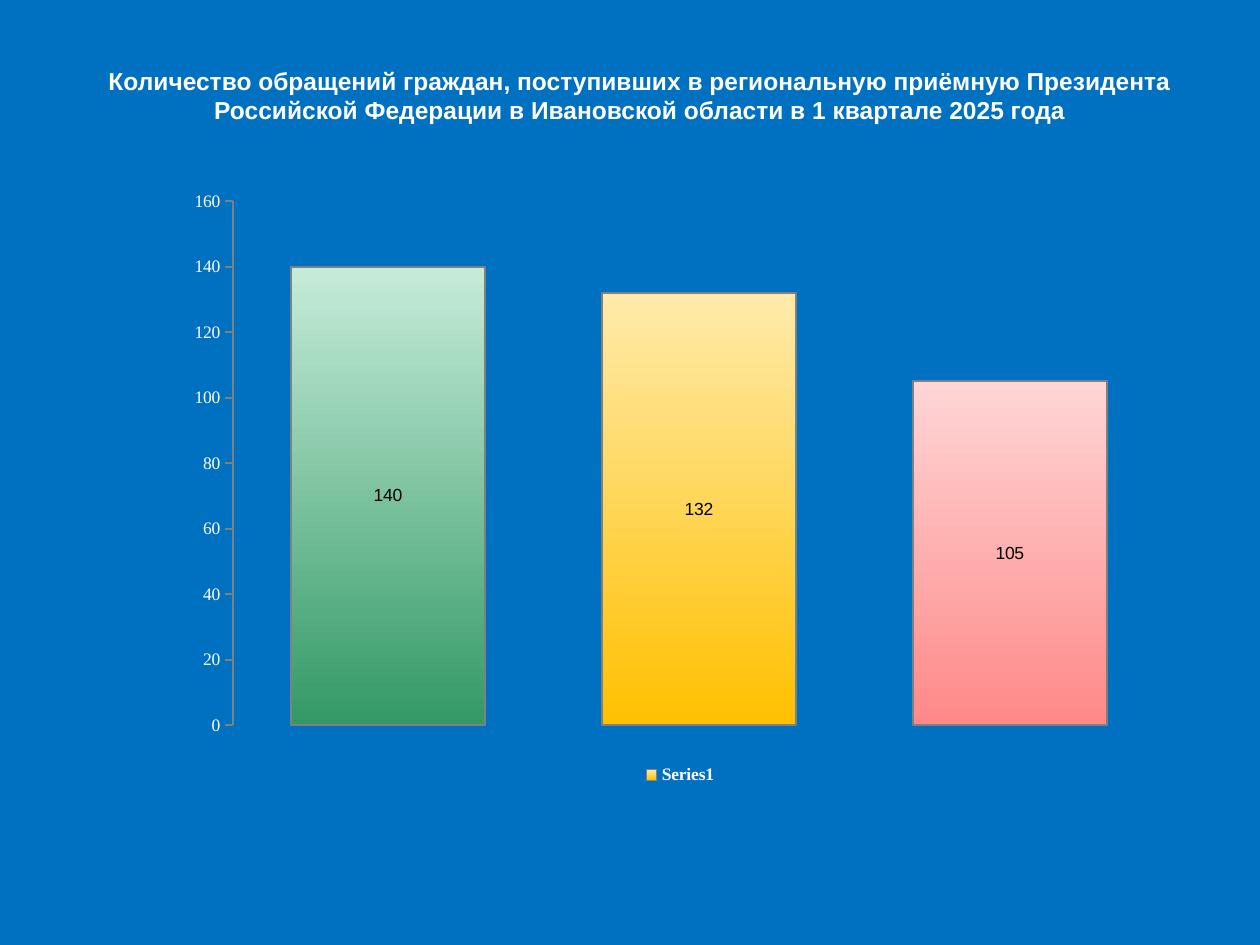
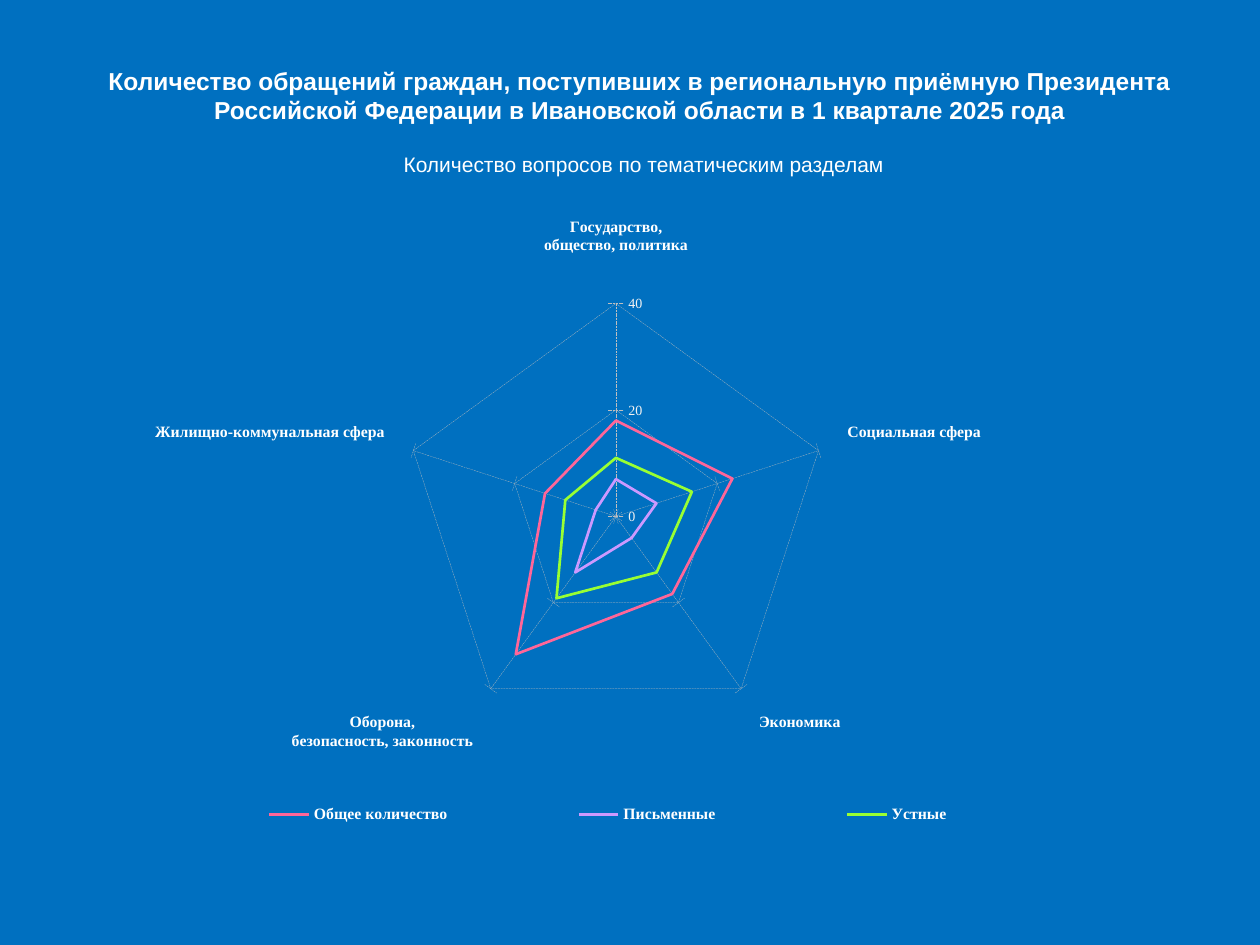
from dataclasses import dataclass

from pptx import Presentation
from pptx.chart.data import CategoryChartData
from pptx.dml.color import RGBColor
from pptx.enum.chart import XL_CHART_TYPE as ChartType
from pptx.enum.chart import XL_LEGEND_POSITION as LegendPosition
from pptx.enum.chart import XL_TICK_MARK as TickMark
from pptx.enum.dml import MSO_LINE as Dash
from pptx.enum.text import MSO_ANCHOR as Anchor
from pptx.enum.text import MSO_AUTO_SIZE as AutoSize
from pptx.enum.text import PP_ALIGN as Align
from pptx.oxml import parse_xml
from pptx.oxml.ns import nsdecls
from pptx.util import Cm, Pt

# Shared look
BLUE, WHITE, BLACK = "0070C0", "FFFFFF", "000000"
GRAY, SILVER, PALE = "808080", "BFBFBF", "F2F2F2"
SANS, SERIF = "Arial", "Times New Roman"
TITLE = ("Количество обращений граждан, поступивших в региональную приёмную "
         "Президента Российской Федерации в Ивановской области в 1 квартале 2025 года")
SUBTITLE = "Количество вопросов по тематическим разделам"


@dataclass(frozen=True)
class Area:
    """Left, top, width and height: centimetres on a page, fractions in a chart."""
    left: float
    top: float
    width: float
    height: float

    def lengths(self):
        return [Cm(v) for v in (self.left, self.top, self.width, self.height)]


@dataclass(frozen=True)
class Bar:
    value: int
    light: str
    dark: str


@dataclass(frozen=True)
class Ring:
    name: str
    values: tuple
    color: str


TITLE_AREA = Area(0.81, 1.12, 24.18, 1.6)
SUBTITLE_AREA = Area(0.89, 2.92, 24.18, 0.79)

BARS = [
    Bar(140, "C6ECD9", "339966"),
    Bar(132, "FFEBAB", "FFC000"),
    Bar(105, "FFD5D5", "FF8989"),
]
TOPICS = [
    "Государство,\nобщество, политика\n",
    "Социальная сфера",
    "Экономика",
    "Оборона,\nбезопасность, законность\n",
    "Жилищно-коммунальная сфера",
]
RINGS = [
    Ring("Общее количество", (18, 23, 18, 32, 14), "FF6699"),
    Ring("Письменные", (7, 8, 5, 13, 4), "CC99FF"),
    Ring("Устные", (11, 15, 13, 19, 10), "99FF33"),
]


def rgb(color: str) -> RGBColor:
    return RGBColor.from_string(color)


def style_font(font, size: float, color: str, name: str = SANS, bold: bool = False) -> None:
    font.size, font.name, font.bold = Pt(size), name, bold
    font.color.rgb = rgb(color)


def style_line(line, color: str, width: float, dash=None) -> None:
    line.color.rgb = rgb(color)
    line.width = Pt(width)
    if dash is not None:
        line.dash_style = dash


def style_gradient(fill, light: str, dark: str) -> None:
    """Run the fill from light at the top to dark at the bottom."""
    fill.gradient()
    fill.gradient_angle = 270
    for stop, color in zip(fill.gradient_stops, (light, dark)):
        stop.color.rgb = rgb(color)


def write_text(box, text: str, *, size: float, bold: bool = False) -> None:
    frame = box.text_frame
    frame.word_wrap = True
    frame.auto_size = AutoSize.NONE
    frame.vertical_anchor = Anchor.MIDDLE
    para = frame.paragraphs[0]
    para.alignment = Align.CENTER
    span = para.add_run()
    span.text = text
    style_font(span.font, size, WHITE, bold=bold)


def add_page(deck):
    page = deck.slides.add_slide(deck.slide_layouts.get_by_name("Title Only"))
    title = page.shapes.title
    title.left, title.top, title.width, title.height = TITLE_AREA.lengths()
    write_text(title, TITLE, size=14, bold=True)
    return page


def make_layout(area: Area, inner: bool = False):
    target = '<c:layoutTarget val="inner"/>' if inner else ""
    return parse_xml(
        f'<c:layout {nsdecls("c")}><c:manualLayout>{target}'
        '<c:xMode val="edge"/><c:yMode val="edge"/>'
        f'<c:x val="{area.left}"/><c:y val="{area.top}"/>'
        f'<c:w val="{area.width}"/><c:h val="{area.height}"/>'
        '</c:manualLayout></c:layout>')


def place_parts(chart, plot: Area, legend: Area) -> None:
    """Fix the places of the plot area and the legend inside the chart."""
    plot_part = chart.element.xpath("c:chart/c:plotArea")[0]
    legend_part = chart.element.xpath("c:chart/c:legend")[0]
    for part in (plot_part, legend_part):
        for old in part.xpath("c:layout"):
            part.remove(old)
    plot_part.insert(0, make_layout(plot, inner=True))
    legend_part.xpath("c:legendPos")[0].addnext(make_layout(legend))


def add_chart(page, kind, data, area: Area, *, plot: Area, legend: Area,
              size: float, legend_size: float, maximum: int):
    chart = page.shapes.add_chart(kind, *area.lengths(), data).chart
    chart.has_title = False
    style_font(chart.font, size, BLACK)
    chart.plots[0].vary_by_categories = False
    chart.has_legend = True
    chart.legend.position = LegendPosition.BOTTOM
    chart.legend.include_in_layout = False
    style_font(chart.legend.font, legend_size, WHITE, SERIF, bold=True)
    chart.value_axis.minimum_scale = 0
    chart.value_axis.maximum_scale = maximum
    chart.value_axis.major_unit = 20
    place_parts(chart, plot, legend)
    return chart


def add_totals(page) -> None:
    data = CategoryChartData()
    data.categories = [str(n) for n in range(1, len(BARS) + 1)]
    data.add_series("Series1", [bar.value for bar in BARS])
    chart = add_chart(
        page, ChartType.COLUMN_STACKED, data, Area(2.69, 2.92, 20.8, 14),
        plot=Area(0.105, 0.081, 0.904, 0.755), legend=Area(0.43, 0.885, 0.2, 0.045),
        size=10, legend_size=10, maximum=160)

    # Axes
    chart.category_axis.visible = False
    axis = chart.value_axis
    axis.has_major_gridlines = False
    axis.major_tick_mark = TickMark.OUTSIDE
    style_line(axis.format.line, GRAY, 1.15)
    style_font(axis.tick_labels.font, 10, WHITE, SERIF)

    # Columns and their values
    columns = chart.plots[0]
    columns.gap_width, columns.overlap = 60, 100
    series = columns.series[0]
    style_gradient(series.format.fill, BARS[1].light, BARS[1].dark)
    style_line(series.format.line, GRAY, 1.15)
    for index in (0, 2):
        point = series.points[index].format
        style_gradient(point.fill, BARS[index].light, BARS[index].dark)
        style_line(point.line, GRAY, 1.15)
    series.data_labels.show_value = True
    style_font(series.data_labels.font, 10, BLACK)


def add_topics(page) -> None:
    data = CategoryChartData()
    data.categories = TOPICS
    for ring in RINGS:
        data.add_series(ring.name, ring.values)
    chart = add_chart(
        page, ChartType.RADAR, data, Area(2.69, 4.32, 19.13, 12.8),
        plot=Area(0.284, 0.116, 0.449, 0.72), legend=Area(0.01, 0.92, 0.98, 0.05),
        size=4.1, legend_size=9, maximum=40)

    # Axes and web
    topics, axis = chart.category_axis, chart.value_axis
    for each in (topics, axis):
        each.major_tick_mark = TickMark.CROSS
        each.has_major_gridlines = True
    style_font(topics.tick_labels.font, 9, WHITE, SERIF, bold=True)
    style_line(topics.major_gridlines.format.line, BLACK, 0.13)
    style_font(axis.tick_labels.font, 8, PALE, SERIF)
    for line in (axis.format.line, axis.major_gridlines.format.line):
        style_line(line, SILVER, 0.13, Dash.LONG_DASH)

    # Rings
    for series, ring in zip(chart.plots[0].series, RINGS):
        style_line(series.format.line, ring.color, 1.53)


def main() -> None:
    deck = Presentation()
    deck.slide_width, deck.slide_height = Cm(25.4), Cm(19.05)
    background = deck.slide_master.background.fill
    background.solid()
    background.fore_color.rgb = rgb(BLUE)

    # Slide 1: totals
    add_totals(add_page(deck))

    # Slide 2: topics
    page = add_page(deck)
    add_topics(page)
    write_text(page.shapes.add_textbox(*SUBTITLE_AREA.lengths()), SUBTITLE, size=12)

    deck.save("out.pptx")


if __name__ == "__main__":
    main()
